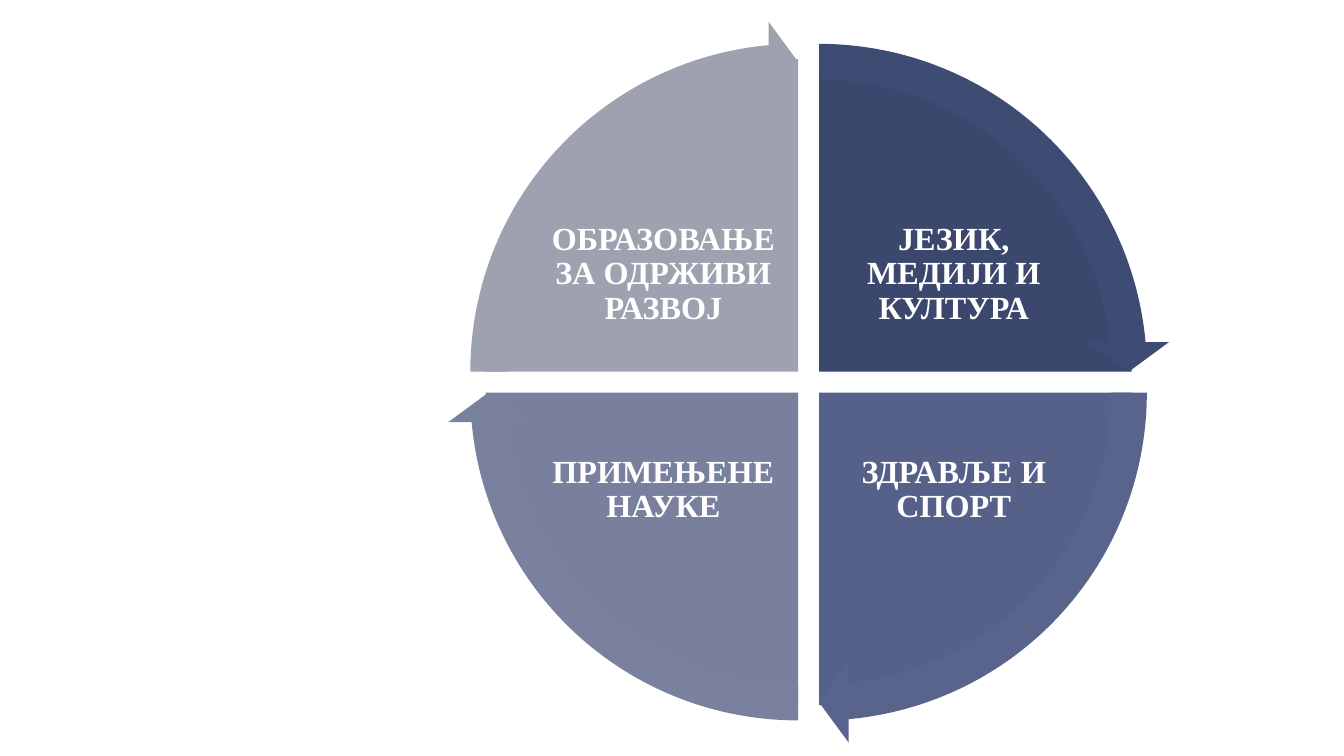
import pptx
import pptx.util
import pptx.dml.color
import pptx.enum.shapes
import pptx.enum.text

Pt = pptx.util.Pt
SHAPES = pptx.enum.shapes.MSO_SHAPE

COLORS = {
    "language": "3B476C", "language_arrow": "3E4B72",
    "health": "566189", "health_arrow": "58648C",
    "science": "78809E", "science_arrow": "79819F",
    "education": "9EA2B0", "education_arrow": "9EA1AF",
    "text": "FFFFFF",
}
# Colour key, side (-1 left, 1 right), level (-1 top, 1 bottom), start angle, label
QUADRANTS = [
    ("language", 1, -1, 270, "ЈЕЗИК, МЕДИЈИ И КУЛТУРА"),
    ("health", 1, 1, 0, "ЗДРАВЉЕ И СПОРТ"),
    ("science", -1, 1, 90, "ПРИМЕЊЕНЕ НАУКЕ"),
    ("education", -1, -1, 180, "ОБРАЗОВАЊЕ ЗА ОДРЖИВИ РАЗВОЈ"),
]
CENTER_X, CENTER_Y = 577.6, 273
HALF_GAP = 7.55
PIE_SIZE, ARROW_SIZE = 446.4, 501.8
LABEL_W, LABEL_H = 165, 122.4
LABEL_DX, LABEL_DY = 103.7, 77
ANGLE_UNIT = 0.6  # adjustment value of one degree
HEAD_ANGLE = 3.275


def rgb(name):
    return pptx.dml.color.RGBColor.from_string(COLORS[name])


def centered_box(x, y, w, h):
    return Pt(x - w / 2), Pt(y - h / 2), Pt(w), Pt(h)


def add_round(s, kind, side, level, size, color, adjustments):
    """Add a shape whose circle is shifted from the centre by half the gap."""
    box = centered_box(CENTER_X + side * HALF_GAP, CENTER_Y + level * HALF_GAP, size, size)
    sp = s.shapes.add_shape(kind, *box)
    for i, value in enumerate(adjustments):
        sp.adjustments[i] = value
    sp.shadow.inherit = False
    sp.fill.solid()
    sp.fill.fore_color.rgb = rgb(color)
    sp.line.fill.background()


def add_pie(s, color, side, level, start):
    end = (start + 90) % 360
    add_round(s, SHAPES.PIE, side, level, PIE_SIZE, color,
              (start * ANGLE_UNIT, end * ANGLE_UNIT))


def add_arrow(s, color, side, level, start):
    tip = (start + 90) * ANGLE_UNIT - HEAD_ANGLE
    add_round(s, SHAPES.CIRCULAR_ARROW, side, level, ARROW_SIZE, color + "_arrow",
              (0.051, HEAD_ANGLE, tip, start * ANGLE_UNIT, 0.059))


def add_label(s, side, level, text):
    box = centered_box(CENTER_X + side * LABEL_DX, CENTER_Y + level * LABEL_DY, LABEL_W, LABEL_H)
    tf = s.shapes.add_textbox(*box).text_frame
    tf.word_wrap = True
    tf.vertical_anchor = pptx.enum.text.MSO_ANCHOR.MIDDLE
    tf.margin_left = tf.margin_right = tf.margin_top = tf.margin_bottom = Pt(2.3)
    p = tf.paragraphs[0]
    p.text = text
    p.alignment = pptx.enum.text.PP_ALIGN.CENTER
    p.line_spacing = 0.9
    p.font.name = "Times New Roman"
    p.font.size = Pt(23)
    p.font.bold = True
    p.font.color.rgb = rgb("text")


def main():
    prs = pptx.Presentation()
    prs.slide_width, prs.slide_height = Pt(960), Pt(540)
    s = prs.slides.add_slide(prs.slide_layouts[6])
    for color, side, level, start, text in QUADRANTS:
        add_pie(s, color, side, level, start)
        add_label(s, side, level, text)
    for color, side, level, start, _ in QUADRANTS:
        add_arrow(s, color, side, level, start)
    prs.save("out.pptx")


if __name__ == "__main__":
    main()
